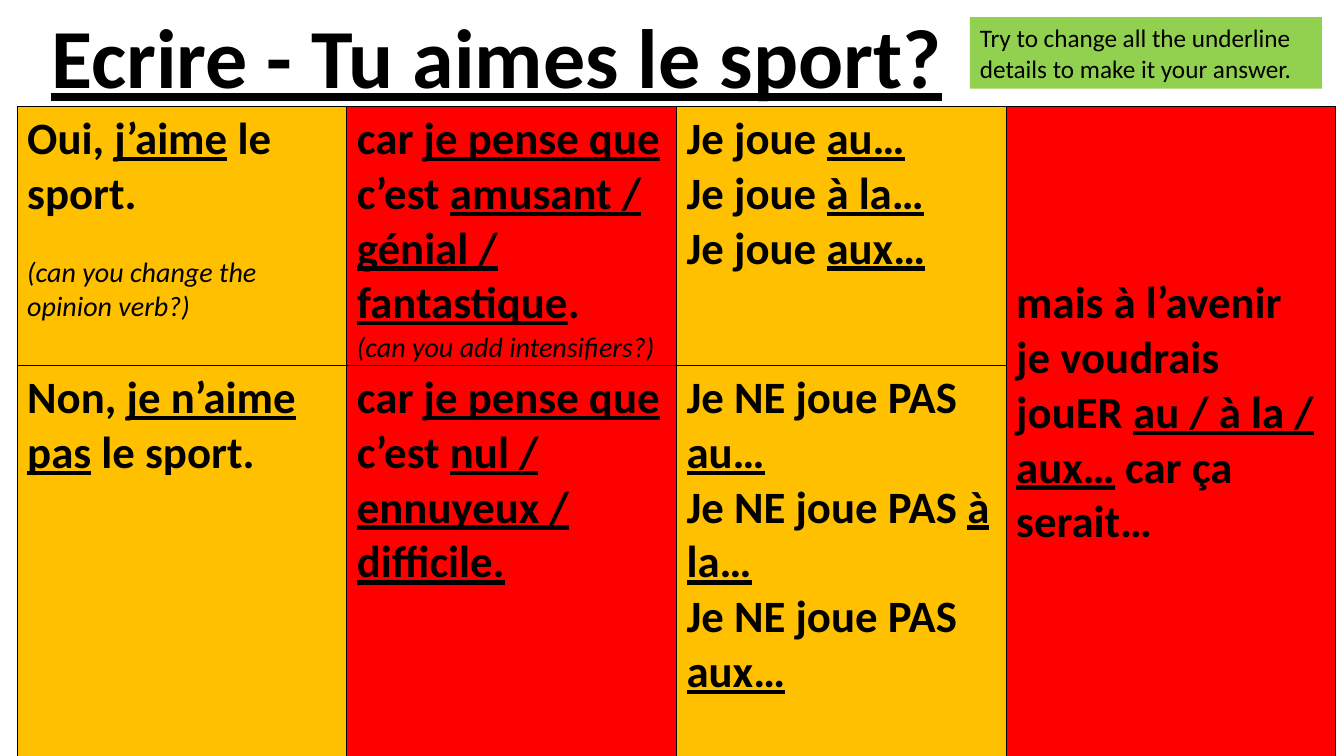
import pptx
import pptx.dml.color
import pptx.enum.shapes
import pptx.oxml
import pptx.oxml.ns
import pptx.util

Inches = pptx.util.Inches
Pt = pptx.util.Pt
RGBColor = pptx.dml.color.RGBColor

BLACK = RGBColor(0x00, 0x00, 0x00)
AMBER = RGBColor(0xFF, 0xC0, 0x00)
RED = RGBColor(0xFF, 0x00, 0x00)
GREEN = RGBColor(0x92, 0xD0, 0x50)

COLUMN_WIDTH = Inches(3.27)
COLUMN_FILLS = [AMBER, RED, AMBER, RED]
ROW_HEIGHTS = [Inches(2.57), Inches(3.9)]

# Sentence starters by row and column; text between underscores is underlined
ANSWERS = [
    [
        ["Oui, _j’aime_ le sport."],
        ["car _je pense que_ c’est _amusant / génial / fantastique_."],
        ["Je joue _au…_", "Je joue _à la…_", "Je joue _aux…_"],
        ["mais à l’avenir je voudrais jouER _au / à la / aux…_ car ça serait…"],
    ],
    [
        ["Non, _je n’aime pas_ le sport."],
        ["car _je pense que_ c’est _nul / ennuyeux / difficile._"],
        ["Je NE joue PAS _au…_", "Je NE joue PAS _à la…_", "Je NE joue PAS _aux…_"],
    ],
]


def write(frame, text, size, bold=False, italic=False, space_before=0, new=False):
    """Write one paragraph, underlining the parts between underscores."""
    para = frame.add_paragraph() if new else frame.paragraphs[0]
    para.alignment = pptx.enum.text.PP_ALIGN.LEFT
    para.space_before = Pt(space_before)
    for index, part in enumerate(text.split("_")):
        if not part:
            continue
        span = para.add_run()
        span.text = part
        span.font.name = "Calibri"
        span.font.size = Pt(size)
        span.font.bold = bold
        span.font.italic = italic
        span.font.underline = index % 2 == 1
        span.font.color.rgb = BLACK


def set_borders(cell):
    properties = cell._tc.get_or_add_tcPr()
    namespace = pptx.oxml.ns.nsdecls("a")
    for index, side in enumerate(("lnL", "lnR", "lnT", "lnB")):
        border = pptx.oxml.parse_xml(
            f'<a:{side} {namespace} w="12700"><a:solidFill>'
            f'<a:srgbClr val="{BLACK}"/></a:solidFill></a:{side}>'
        )
        properties.insert(index, border)


def add_title(slide):
    box = slide.shapes.add_textbox(Inches(0.41), 0, Inches(9.15), Inches(1.1))
    box.text_frame.word_wrap = False
    write(box.text_frame, "_Ecrire - Tu aimes le sport?_", size=60, bold=True)


def add_answer_table(slide):
    table = slide.shapes.add_table(
        2, 4, Inches(0.17), Inches(1.06), COLUMN_WIDTH * 4, sum(ROW_HEIGHTS)
    ).table
    table.first_row = False
    table.horz_banding = False
    for column in table.columns:
        column.width = COLUMN_WIDTH
    for row, height in zip(table.rows, ROW_HEIGHTS):
        row.height = height

    # Fills and borders
    for row in table.rows:
        for cell, color in zip(row.cells, COLUMN_FILLS):
            cell.fill.solid()
            cell.fill.fore_color.rgb = color
            set_borders(cell)

    # The future-plan cell spans both rows and starts lower down
    future = table.cell(0, 3)
    future.merge(table.cell(1, 3))
    future.margin_top = Inches(1.68)

    # Sentences
    for row_index, row in enumerate(ANSWERS):
        for column_index, lines in enumerate(row):
            frame = table.cell(row_index, column_index).text_frame
            for line_index, line in enumerate(lines):
                write(frame, line, size=32, bold=True, new=line_index > 0)

    # Hints
    write(table.cell(0, 0).text_frame, "(can you change the opinion verb?)",
          size=20, italic=True, space_before=24.4, new=True)
    write(table.cell(0, 1).text_frame, "(can you add intensifiers?)",
          size=20, italic=True, new=True)


def add_instruction(slide):
    box = slide.shapes.add_shape(
        pptx.enum.shapes.MSO_SHAPE.RECTANGLE,
        Inches(9.62), Inches(0.17), Inches(3.49), Inches(0.71),
    )
    box.shadow.inherit = False
    box.fill.solid()
    box.fill.fore_color.rgb = GREEN
    box.line.fill.background()
    box.text_frame.word_wrap = True
    write(box.text_frame,
          "Try to change all the underline details to make it your answer.", size=18)


def main():
    deck = pptx.Presentation()
    deck.slide_width = Inches(13.33)
    deck.slide_height = Inches(7.5)
    slide = deck.slides.add_slide(deck.slide_layouts[6])
    add_title(slide)
    add_answer_table(slide)
    add_instruction(slide)
    deck.save("out.pptx")


if __name__ == "__main__":
    main()
